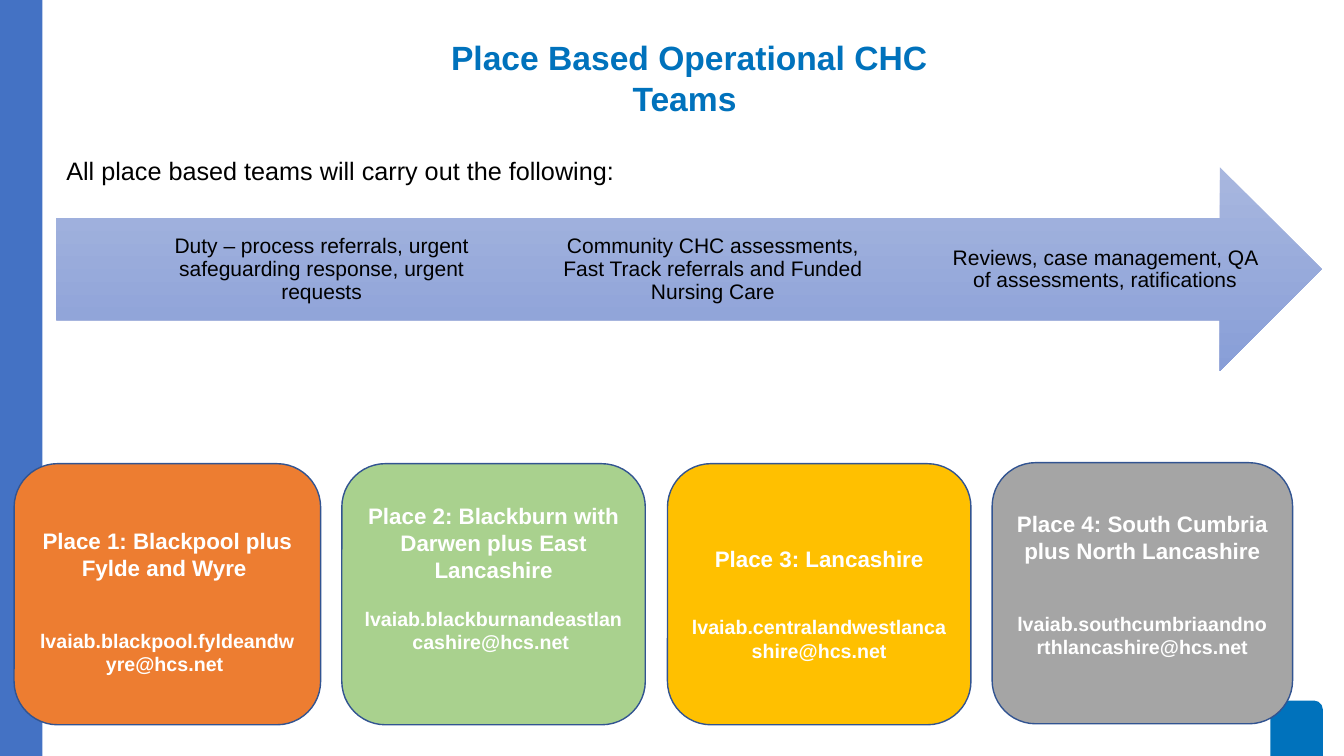
from pptx import Presentation
from pptx.dml.color import RGBColor
from pptx.enum.shapes import MSO_SHAPE
from pptx.enum.text import MSO_ANCHOR, PP_ALIGN
from pptx.util import Inches, Pt

RECTANGLE = MSO_SHAPE.RECTANGLE
ROUNDED = MSO_SHAPE.ROUNDED_RECTANGLE
ARROW = MSO_SHAPE.RIGHT_ARROW
MIDDLE, TOP = MSO_ANCHOR.MIDDLE, MSO_ANCHOR.TOP
CENTER, LEFT = PP_ALIGN.CENTER, PP_ALIGN.LEFT

# Content
FONT = "Arial"
COLORS = {
    "title": "0072BC", "band": "4472C4", "corner": "0072BC",
    "arrow_top": "A8B7DF", "arrow_bottom": "889ED7",
    "outline": "325491", "black": "000000", "white": "FFFFFF",
    "orange": "ED7D31", "green": "A9D18E", "gold": "FFC000", "grey": "A5A5A5",
}
TITLE = "Place Based Operational CHC Teams "
INTRO = "All place based teams will carry out the following:"
DUTIES = [  # left, text
    (1.57, "Duty – process referrals, urgent safeguarding response, urgent requests"),
    (5.45, "Community CHC assessments, Fast Track referrals and Funded Nursing Care"),
    (9.34, "Reviews, case management, QA of assessments, ratifications"),
]
PLACES = [  # left, top, width, colour, name, address, gap in points, shift down
    (0.14, 4.6, 3.04, "orange", "Place 1: Blackpool plus Fylde and Wyre ",
     "lvaiab.blackpool.fyldeandwyre@hcs.net ", 34, 0.14),
    (3.39, 4.6, 3.01, "green", "Place 2: Blackburn with Darwen plus East Lancashire",
     "lvaiab.blackburnandeastlancashire@hcs.net ", 17, -0.32),
    (6.62, 4.6, 3.01, "gold", "Place 3: Lancashire",
     "lvaiab.centralandwestlancashire@hcs.net", 30.5, 0.19),
    (9.84, 4.59, 2.98, "grey", "Place 4: South Cumbria plus North Lancashire",
     "lvaiab.southcumbriaandnorthlancashire@hcs.net", 34, -0.17),
]
PLACE_HEIGHT = 2.59
INSET = 0.05


def color(name):
    return RGBColor.from_string(COLORS[name])


def add_block(page, kind, left, top, width, height, fill=None, outline=None):
    block = page.shapes.add_shape(
        kind, Inches(left), Inches(top), Inches(width), Inches(height))
    block.shadow.inherit = False
    if fill:
        block.fill.solid()
        block.fill.fore_color.rgb = color(fill)
    if outline:
        block.line.color.rgb = color(outline)
        block.line.width = Pt(1)
    else:
        block.line.fill.background()
    return block


def add_span(para, text, size, ink, bold=False, align=CENTER):
    para.alignment = align
    span = para.add_run()
    span.text = text
    span.font.name = FONT
    span.font.size = Pt(size)
    span.font.bold = bold
    span.font.color.rgb = color(ink)


def add_label(page, left, top, width, height, anchor=TOP):
    box = page.shapes.add_textbox(
        Inches(left), Inches(top), Inches(width), Inches(height))
    frame = box.text_frame
    frame.word_wrap = True
    frame.vertical_anchor = anchor
    return frame


def main():
    deck = Presentation()
    deck.slide_width, deck.slide_height = Inches(13.33), Inches(7.5)
    page = deck.slides.add_slide(deck.slide_layouts[6])

    # Corner tab and side band
    add_block(page, ROUNDED, 12.6, 6.95, 0.52, 0.75, "corner")
    add_block(page, RECTANGLE, -0.07, -0.08, 0.49, 7.84, "band")

    # Title
    frame = add_label(page, 3.99, 0.32, 5.69, 0.91)
    add_span(frame.paragraphs[0], TITLE, 24, "title", bold=True)

    # Arrow with the shared duties
    arrow = add_block(page, ARROW, 0.56, 1.66, 12.55, 2.02)
    arrow.fill.gradient()
    arrow.fill.gradient_angle = 270
    for stop, name in zip(arrow.fill.gradient_stops, ("arrow_top", "arrow_bottom")):
        stop.color.rgb = color(name)
    for left, text in DUTIES:
        frame = add_label(page, left, 2.17, 3.24, 1.01, MIDDLE)
        frame.margin_left = frame.margin_right = 0
        frame.margin_top = frame.margin_bottom = Inches(0.17)
        para = frame.paragraphs[0]
        para.line_spacing = 0.9
        add_span(para, text, 15, "black")

    # Place cards
    for left, top, width, fill, name, address, gap, shift in PLACES:
        card = add_block(page, ROUNDED, left, top, width, PLACE_HEIGHT, fill, "outline")
        frame = card.text_frame
        frame.word_wrap = True
        frame.vertical_anchor = MIDDLE
        frame.margin_top = Inches(INSET + max(shift, 0))
        frame.margin_bottom = Inches(INSET + max(-shift, 0))
        add_span(frame.paragraphs[0], name, 16, "white", bold=True)
        para = frame.add_paragraph()
        para.space_before = Pt(gap)
        add_span(para, address, 14, "white", bold=True)

    # Introduction
    frame = add_label(page, 0.56, 1.49, 7.04, 0.4)
    add_span(frame.paragraphs[0], INTRO, 18, "black", align=LEFT)

    deck.save("out.pptx")


if __name__ == "__main__":
    main()
